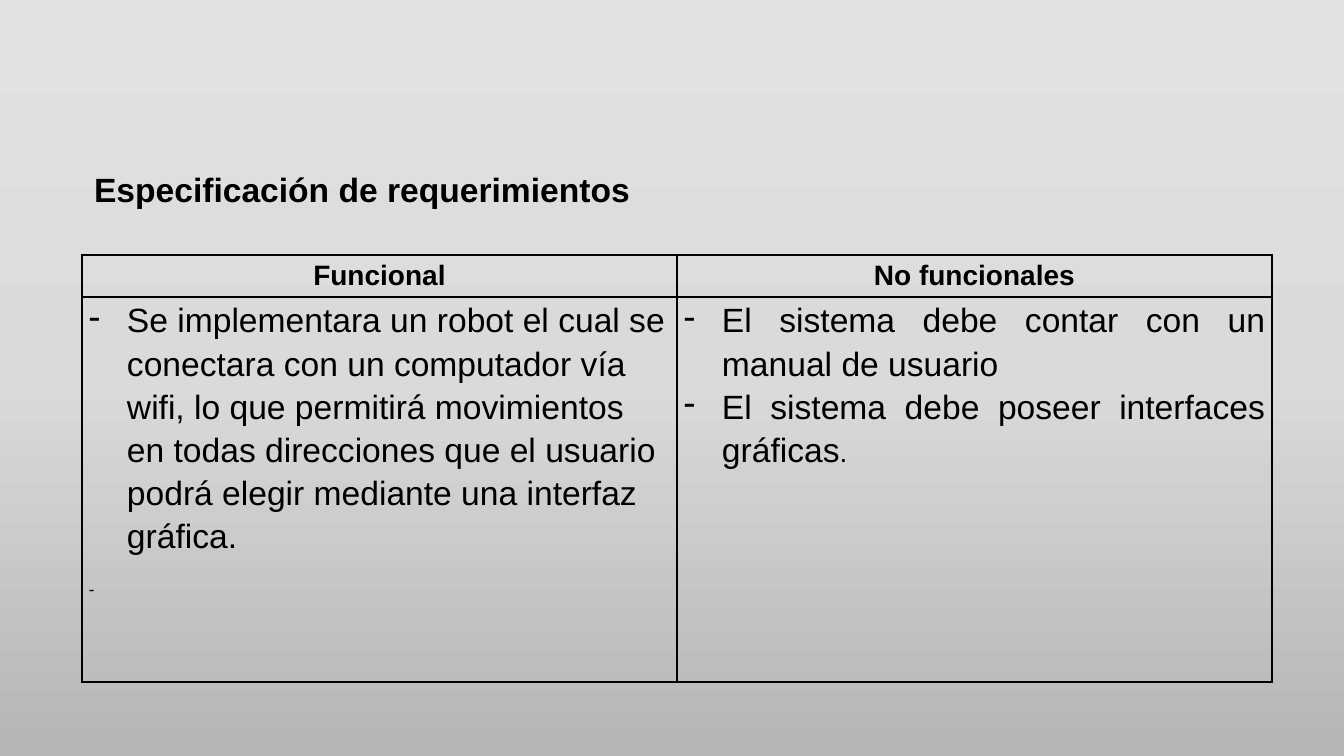
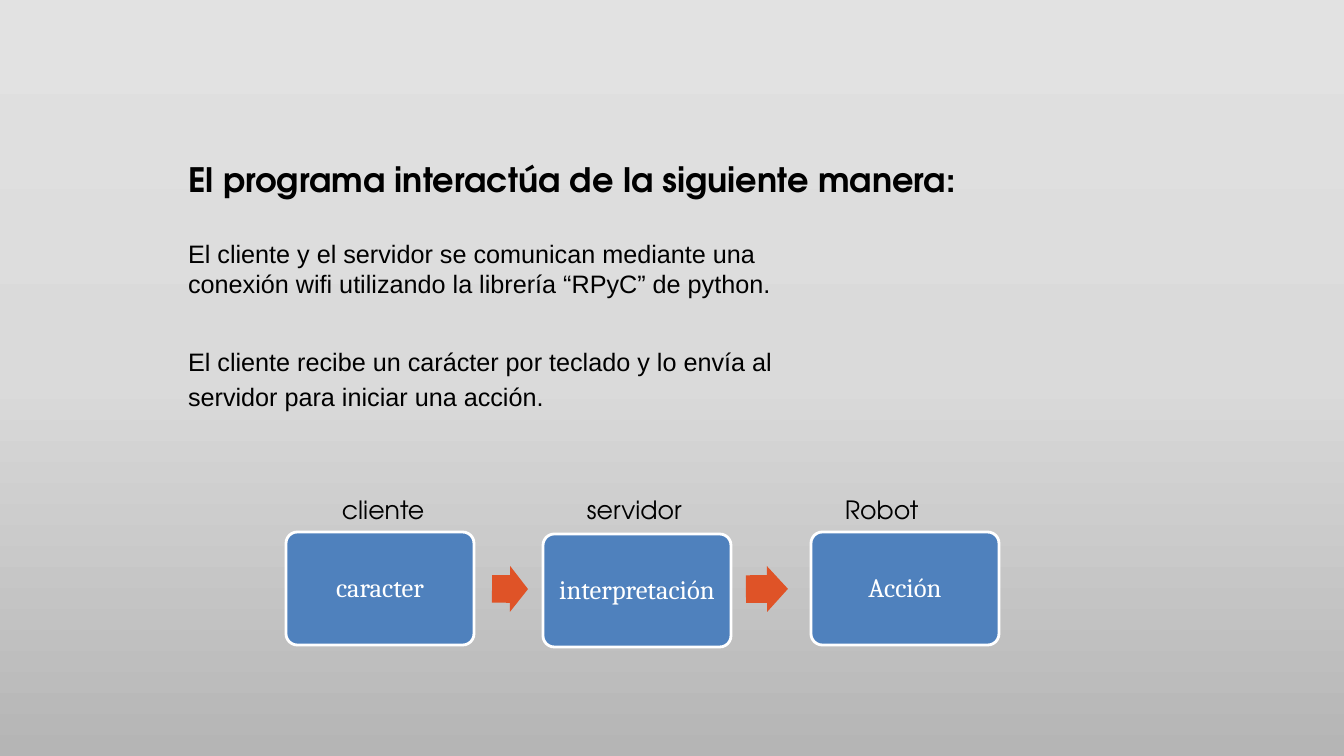
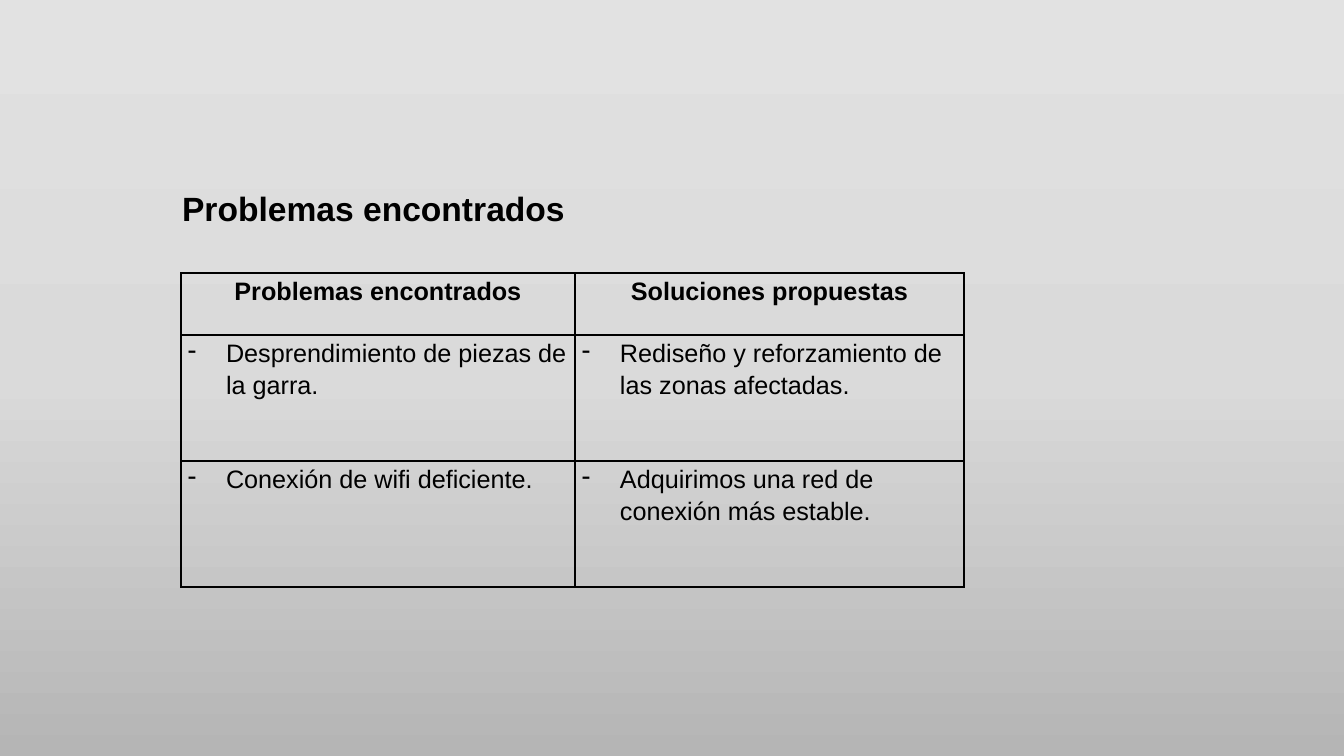
"""Build three slides on a robot project: requirements, program flow and problems found."""
from lxml import etree
from pptx import Presentation
from pptx.dml.color import RGBColor
from pptx.enum.shapes import MSO_SHAPE
from pptx.enum.text import MSO_ANCHOR, MSO_AUTO_SIZE, PP_ALIGN
from pptx.oxml.ns import qn
from pptx.util import Pt

LEFT, CENTER, JUSTIFY = PP_ALIGN.LEFT, PP_ALIGN.CENTER, PP_ALIGN.JUSTIFY
TOP, MIDDLE = MSO_ANCHOR.TOP, MSO_ANCHOR.MIDDLE
NO_AUTOSIZE = MSO_AUTO_SIZE.NONE
ROUNDED, ARROW = MSO_SHAPE.ROUNDED_RECTANGLE, MSO_SHAPE.RIGHT_ARROW
TITLE_AND_BODY, TITLE_ONLY = 1, 5

WIDTH, HEIGHT = 1344, 756
SCALE = 12192000 / WIDTH
COLORS = {"text": "000000", "light": "FFFFFF", "box": "4F81BD", "arrow": "DF5327"}
BACKGROUND = [(0, "E2E2E2"), (50, "DADADA"), (100, "B5B5B5")]
SANS, DISPLAY, SERIF = "Arial", "TeX Gyre Adventor", "Cambria"
DASH_INDENT = 38

REQUIREMENTS = {
    "title": "Especificación de requerimientos",
    "title_area": (84, 164, 722, 50),
    "origin": (82, 255),
    "columns": [595, 595],
    "rows": [42, 385],
    "header_size": 20,
    "header": ["Funcional", "No funcionales"],
    "body": [[
        (LEFT, [
            [("Se implementara un robot el cual se conectara con un computador vía wifi, "
              "lo que permitirá movimientos en todas direcciones que el usuario podrá "
              "elegir mediante una interfaz gráfica.", 24)],
        ]),
        (JUSTIFY, [
            [("El sistema debe contar con un manual de usuario", 24)],
            [("El sistema debe poseer interfaces gráficas", 24), (".", 20)],
        ]),
    ]],
}
PROBLEMS = {
    "title": "Problemas encontrados",
    "title_area": (172, 183, 675, 50),
    "origin": (181, 273),
    "columns": [394, 389],
    "rows": [62, 126, 126],
    "header_size": 18,
    "header": ["Problemas encontrados", "Soluciones propuestas"],
    "body": [
        [(LEFT, [[("Desprendimiento de piezas de la garra.", 18)]]),
         (LEFT, [[("Rediseño y reforzamiento de las zonas afectadas.", 18)]])],
        [(LEFT, [[("Conexión de wifi deficiente.", 18)]]),
         (LEFT, [[("Adquirimos una red de conexión más estable.", 18)]])],
    ],
}
FLOW_TITLE = "El programa interactúa de la siguiente manera:"
FLOW_TEXT = [
    ("El cliente y el servidor se comunican mediante una conexión wifi utilizando "
     "la librería “RPyC” de python.", 1.0, 0),
    ("El cliente recibe un carácter por teclado y lo envía al servidor para iniciar "
     "una acción.", 1.15, 31),
]
STEPS = [
    ("cliente", 332, "caracter", 286, 532),
    ("servidor", 577, "interpretación", 543, 534),
    ("Robot", 835, "Acción", 811, 532),
]
ARROWS = [(492, 36, 0.4), (746, 42, -0.3)]


def px(*lengths):
    return [round(length * SCALE) for length in lengths]


def color(name):
    return RGBColor.from_string(COLORS[name])


def add_span(para, text, size, font=SANS, bold=False, ink="text"):
    span = para.add_run()
    span.text = text
    span.font.size = Pt(size)
    span.font.name = font
    span.font.bold = bold
    span.font.color.rgb = color(ink)


def next_para(frame, index):
    return frame.add_paragraph() if index else frame.paragraphs[0]


def set_bullet(para, mark=None):
    properties = para._p.get_or_add_pPr()
    indent = px(DASH_INDENT)[0] if mark else 0
    properties.set("marL", str(indent))
    properties.set("indent", str(-indent))
    if mark:
        etree.SubElement(properties, qn("a:buChar"), char=mark)
    else:
        etree.SubElement(properties, qn("a:buNone"))


def paint_background(master):
    fill = master.background.fill
    fill.gradient()
    fill.gradient_angle = 270
    stops = master.element.find(".//" + qn("p:bgPr")).find(".//" + qn("a:gsLst"))
    for stop in list(stops):
        stops.remove(stop)
    for position, shade in BACKGROUND:
        stop = etree.SubElement(stops, qn("a:gs"), pos=str(position * 1000))
        etree.SubElement(stop, qn("a:srgbClr"), val=shade)


def place(holder, area):
    holder.left, holder.top, holder.width, holder.height = px(*area)
    frame = holder.text_frame
    frame.word_wrap = True
    frame.auto_size = NO_AUTOSIZE
    frame.vertical_anchor = TOP
    return frame


def add_page(deck, layout, title, area, font=SANS):
    page = deck.slides.add_slide(deck.slide_layouts[layout])
    para = place(page.shapes.title, area).paragraphs[0]
    para.alignment = LEFT
    add_span(para, title, 24, font, bold=True)
    return page


def format_cell(cell):
    cell.margin_left, cell.margin_right = px(7, 7)
    cell.margin_top = cell.margin_bottom = 0
    properties = cell._tc.get_or_add_tcPr()
    for side in ("lnL", "lnR", "lnT", "lnB"):
        line = etree.SubElement(properties, qn("a:" + side), w=str(Pt(1)))
        paint = etree.SubElement(line, qn("a:solidFill"))
        etree.SubElement(paint, qn("a:srgbClr"), val=COLORS["text"])
    cell.fill.background()


def add_table_page(deck, content):
    page = add_page(deck, TITLE_ONLY, content["title"], content["title_area"])
    columns, rows = content["columns"], content["rows"]
    area = px(*content["origin"], sum(columns), sum(rows))
    table = page.shapes.add_table(len(rows), len(columns), *area).table
    table.first_row = table.horz_banding = False
    for column, width in zip(table.columns, px(*columns)):
        column.width = width
    for row, height in zip(table.rows, px(*rows)):
        row.height = height
    for cell in table.iter_cells():
        format_cell(cell)
    for index, heading in enumerate(content["header"]):
        para = table.cell(0, index).text_frame.paragraphs[0]
        para.alignment = CENTER
        para.line_spacing = 1.15
        add_span(para, heading, content["header_size"], bold=True)
    for row_index, row in enumerate(content["body"], 1):
        for column_index, (alignment, items) in enumerate(row):
            frame = table.cell(row_index, column_index).text_frame
            for index, spans in enumerate(items):
                para = next_para(frame, index)
                para.alignment = alignment
                para.line_spacing = 1.15
                set_bullet(para, "-")
                for text, size in spans:
                    add_span(para, text, size)
    return table


def add_requirements(deck):
    table = add_table_page(deck, REQUIREMENTS)
    para = table.cell(1, 0).text_frame.add_paragraph()
    para.line_spacing = 1.15
    para.space_before = Pt(16)
    add_span(para, "-", 12)


def add_block(page, kind, area, fill):
    block = page.shapes.add_shape(kind, *px(*area))
    block.shadow.inherit = False
    block.fill.solid()
    block.fill.fore_color.rgb = color(fill)
    return block


def add_flow(deck):
    page = add_page(deck, TITLE_AND_BODY, FLOW_TITLE, (178, 154, 853, 50), DISPLAY)
    frame = place(page.placeholders[1], (178, 233, 672, 182))
    for index, (text, spacing, gap) in enumerate(FLOW_TEXT):
        para = next_para(frame, index)
        para.line_spacing = spacing
        para.space_before = Pt(gap)
        set_bullet(para)
        add_span(para, text, 18)
    for label, label_left, action, left, top in STEPS:
        caption = page.shapes.add_textbox(*px(label_left, 489, 116, 40))
        caption.text_frame.word_wrap = True
        add_span(caption.text_frame.paragraphs[0], label, 18, DISPLAY)
        box = add_block(page, ROUNDED, (left, top, 188, 113), "box")
        box.adjustments[0] = 0.1
        box.line.color.rgb = color("light")
        box.line.width = Pt(2)
        frame = box.text_frame
        frame.word_wrap = True
        frame.vertical_anchor = MIDDLE
        frame.margin_left, frame.margin_right = px(11, 11)
        para = frame.paragraphs[0]
        para.alignment = CENTER
        para.line_spacing = 0.9
        add_span(para, action, 19, SERIF, ink="light")
    for left, width, angle in ARROWS:
        arrow = add_block(page, ARROW, (left, 566, width, 46), "arrow")
        arrow.adjustments[0] = 0.6
        arrow.adjustments[1] = 0.5
        arrow.rotation = angle
        arrow.line.fill.background()


def main():
    deck = Presentation()
    deck.slide_width, deck.slide_height = px(WIDTH, HEIGHT)
    paint_background(deck.slide_master)
    add_requirements(deck)
    add_flow(deck)
    add_table_page(deck, PROBLEMS)
    deck.save("out.pptx")


if __name__ == "__main__":
    main()
